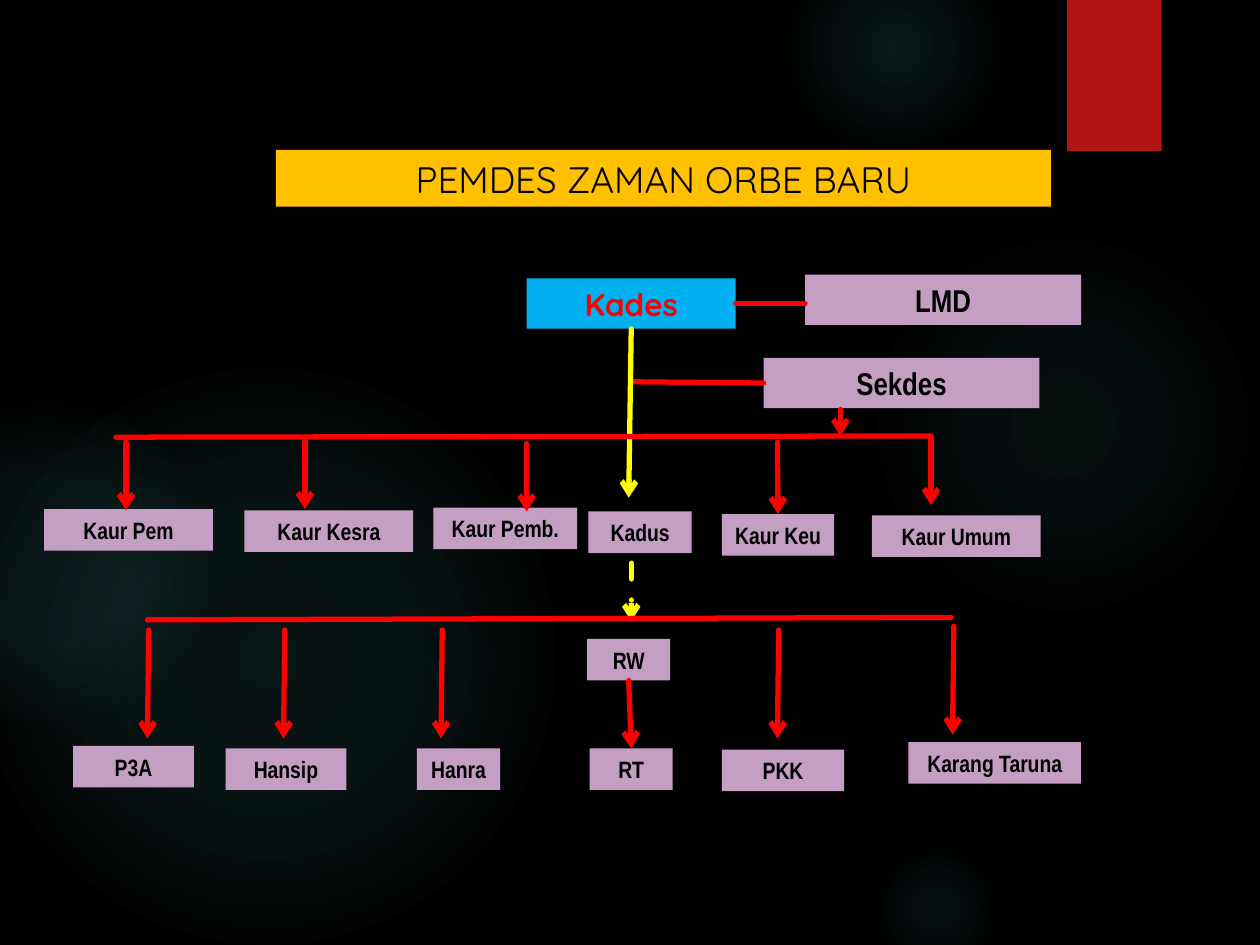
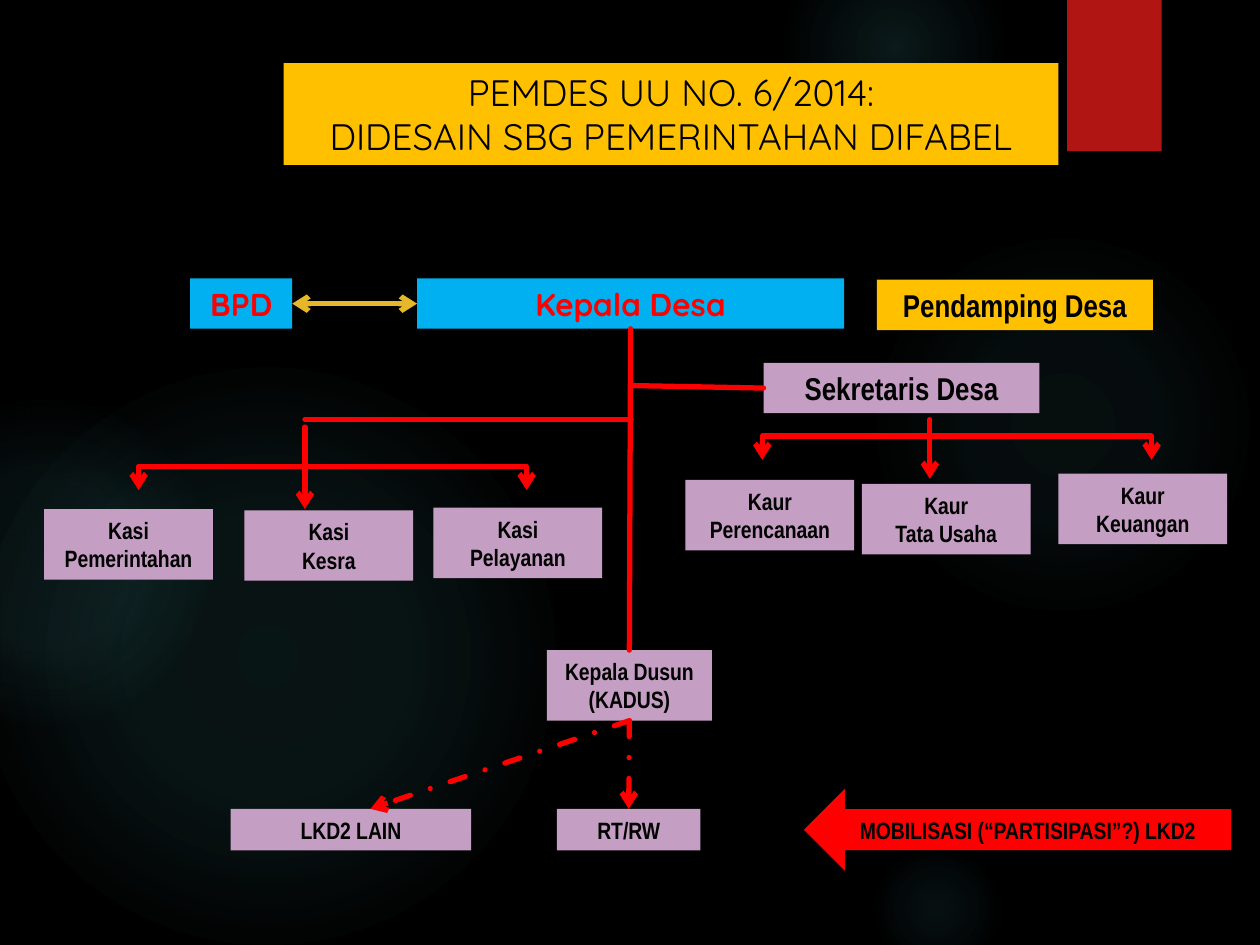
import pptx
import pptx.util
import pptx.dml.color
import pptx.enum.dml
import pptx.enum.shapes
import pptx.enum.text
import pptx.oxml
import pptx.oxml.ns

SHAPE = pptx.enum.shapes.MSO_SHAPE
CONNECTOR = pptx.enum.shapes.MSO_CONNECTOR
qn = pptx.oxml.ns.qn

COLS, ROWS = 10, 7.5
UNIT = pptx.util.Inches(1)  # one column wide, one row high
TOP, LEFT, BOTTOM, RIGHT = range(4)

COLORS = {
    "night": "000000", "glow": "50B9C1", "tab": "B01513", "gold": "FFC000",
    "sky": "00B0F0", "lilac": "C59EC3", "red": "FF0000", "yellow": "FFFF00",
    "amber": "E6B729", "black": "000000",
}
# fill, font, size, bold, text colour
STYLES = {
    "title": ("gold", "Quicksand", 21, False, "black"),
    "chief": ("sky", "Quicksand", 18, True, "red"),
    "officer": ("lilac", "Arial Narrow", 18, True, "black"),
    "advisor": ("gold", "Arial Narrow", 18, True, "black"),
    "unit": ("lilac", "Arial Narrow", 13.5, True, "black"),
    "push": ("red", "Arial Narrow", 13.5, True, "black"),
}
HEIGHTS = {"chief": 0.4, "officer": 0.4, "advisor": 0.4, "unit": 0.33}
TALL = 0.56  # unit box with two lines

# left, top, diameter, then (position %, opacity %) of the gradient stops
GLOWS = [
    (6.89, 1.83, 3.08, ((0, 7), (36, 6), (69, 0))),
    (6.22, -0.5, 1.75, ((0, 14), (36, 7), (73, 0))),
    (6.89, 6.67, 1.08, ((0, 9), (36, 5), (66, 0))),
    (-0.17, 2.92, 4.58, ((0, 11), (36, 10), (75, 0))),
    (-0.92, 3.17, 2.58, ((0, 8), (36, 8), (72, 0))),
]


def grid(*cells):
    return [round(cell * UNIT) for cell in cells]


def rgb(name):
    return pptx.dml.color.RGBColor.from_string(COLORS[name])


def paint(sp, color):
    sp.fill.solid()
    sp.fill.fore_color.rgb = rgb(color)
    sp.line.fill.background()


def write(sp, text, style):
    """Fill a shape in a named style and centre its text, one paragraph a line."""
    fill, font, size, bold, color = STYLES[style]
    paint(sp, fill)
    tf = sp.text_frame
    tf.word_wrap = True
    tf.auto_size = pptx.enum.text.MSO_AUTO_SIZE.NONE
    tf.vertical_anchor = pptx.enum.text.MSO_ANCHOR.MIDDLE
    tf.margin_left = tf.margin_right = pptx.util.Inches(0.07)
    tf.margin_top = tf.margin_bottom = pptx.util.Inches(0.04)
    for i, line in enumerate(text.split("\n")):
        p = tf.add_paragraph() if i else tf.paragraphs[0]
        p.alignment = pptx.enum.text.PP_ALIGN.CENTER
        r = p.add_run()
        r.text = line
        r.font.name = font
        r.font.size = pptx.util.Pt(size)
        r.font.bold = bold
        r.font.color.rgb = rgb(color)


def box(s, text, left, top, width, style="unit", height=None, kind=SHAPE.RECTANGLE):
    sp = s.shapes.add_shape(kind, *grid(left, top, width, height or HEIGHTS[style]))
    sp.shadow.inherit = False
    write(sp, text, style)
    return sp


def stroke(sp, color="red", head=False, tail=False, dashed=False):
    """Give a connector or open outline its round 3 pt line and arrowheads."""
    sp.line.color.rgb = rgb(color)
    sp.line.width = pptx.util.Pt(3)
    if dashed:
        sp.line.dash_style = pptx.enum.dml.MSO_LINE.DASH_DOT
    ln = sp.element.spPr.find(qn("a:ln"))
    ln.set("cap", "rnd")
    for tag, wanted in (("a:headEnd", head), ("a:tailEnd", tail)):
        if wanted:
            end = pptx.oxml.ns.qn(tag)
            ln.append(ln.makeelement(end, {"type": "arrow"}))


def link(s, start, end, **look):
    """Draw a straight connector; an end is (column, row) or (shape, side)."""
    joined = [not isinstance(e[0], (int, float)) for e in (start, end)]
    points = [(0, 0) if j else grid(*e) for e, j in zip((start, end), joined)]
    c = s.shapes.add_connector(CONNECTOR.STRAIGHT, *points[0], *points[1])
    if joined[0]:
        c.begin_connect(*start)
    if joined[1]:
        c.end_connect(*end)
    stroke(c, **look)
    spPr = c.element.spPr
    spPr.append(spPr.makeelement(qn("a:effectLst"), {}))


def bracket(s, left, right, top, bottom):
    """Draw a bar whose two ends turn down into arrows."""
    corners = [(left, bottom), (left, top), (right, top), (right, bottom)]
    points = [tuple(grid(*corner)) for corner in corners]
    fb = s.shapes.build_freeform(*points[0])
    fb.add_line_segments(points[1:], close=False)
    sp = fb.convert_to_shape()
    sp.shadow.inherit = False
    sp.fill.background()
    stroke(sp, head=True, tail=True)


def glow(s, left, top, size, stops):
    sp = s.shapes.add_shape(SHAPE.OVAL, *grid(left, top, size, size))
    sp.shadow.inherit = False
    sp.line.fill.background()
    sp.fill.background()
    gs = "".join(
        f'<a:gs pos="{pos * 1000}"><a:srgbClr val="{COLORS["glow"]}">'
        f'<a:alpha val="{alpha * 1000}"/></a:srgbClr></a:gs>'
        for pos, alpha in stops)
    grad = pptx.oxml.parse_xml(
        f'<a:gradFill {pptx.oxml.ns.nsdecls("a")}><a:gsLst>{gs}</a:gsLst>'
        '<a:path path="circle"><a:fillToRect l="50000" t="50000" r="50000" b="50000"/>'
        '</a:path></a:gradFill>')
    spPr = sp.element.spPr
    spPr.replace(spPr.find(qn("a:noFill")), grad)
    return sp


def decorate_master(prs, s):
    """Draw the backdrop on a slide, then move it to the master."""
    master = prs.slide_master
    master.background.fill.solid()
    master.background.fill.fore_color.rgb = rgb("night")
    backdrop = [glow(s, *g) for g in GLOWS]
    tab = s.shapes.add_shape(SHAPE.RECTANGLE, *grid(8.47, 0, 0.75, 1.2))
    tab.shadow.inherit = False
    paint(tab, "tab")
    for number, sp in enumerate(backdrop + [tab], start=20):
        sp.element.nvSpPr.cNvPr.id = number
        master.shapes.element.append(sp.element)


def titled_slide(prs, text, left, top, height):
    s = prs.slides.add_slide(prs.slide_layouts[5])
    title = s.shapes.title
    title.left, title.top, title.width, title.height = grid(left, top, 6.15, height)
    write(title, text, "title")
    return s


def old_order(s):
    kades = box(s, "Kades", 4.18, 2.21, 1.66, "chief")
    box(s, "LMD", 6.39, 2.18, 2.19, "officer")
    sekdes = box(s, "Sekdes", 6.06, 2.84, 2.19, "officer")
    units = {text: box(s, text, *place) for text, *place in [
        ("Kaur Pem", 0.35, 4.04, 1.34), ("Kaur Kesra", 1.94, 4.05, 1.34),
        ("Kaur Pemb.", 3.44, 4.03, 1.14), ("Kadus", 4.67, 4.06, 0.82),
        ("Kaur Keu", 5.73, 4.08, 0.89), ("Kaur Umum", 6.92, 4.09, 1.34),
        ("RW", 4.66, 5.07, 0.66), ("P3A", 0.58, 5.92, 0.96),
        ("Hansip", 1.79, 5.94, 0.96), ("Hanra", 3.31, 5.94, 0.66),
        ("RT", 4.68, 5.94, 0.66), ("PKK", 5.73, 5.95, 0.97),
        ("Karang Taruna", 7.21, 5.89, 1.37),
    ]}

    link(s, (kades, RIGHT), (6.39, 2.41))
    link(s, (5.01, 3.03), (sekdes, LEFT))
    link(s, (kades, BOTTOM), (4.99, 3.95), color="yellow", tail=True)
    link(s, (6.67, 3.25), (6.67, 3.46), tail=True)

    link(s, (0.92, 3.47), (7.39, 3.46))
    for x, top in [(1, 3.51), (2.42, 3.5), (4.18, 3.52), (7.39, 3.47)]:
        link(s, (x, top), (x, top + 0.54), tail=True)
    link(s, (6.17, 3.51), (units["Kaur Keu"], TOP), tail=True)

    link(s, (5.01, 4.47), (5.01, 4.93), color="yellow", tail=True, dashed=True)
    link(s, (1.17, 4.92), (7.55, 4.9))
    for x, top in [(1.18, 5), (2.26, 5), (3.51, 5), (6.18, 5), (7.57, 4.97)]:
        link(s, (x, top), (x - 0.01, top + 0.86), tail=True)
    link(s, (units["RW"], BOTTOM), (units["RT"], TOP), tail=True)


def new_order(s):
    bpd = box(s, "BPD", 1.51, 2.21, 0.81, "chief")
    kepala = box(s, "Kepala Desa", 3.31, 2.21, 3.39, "chief")
    box(s, "Pendamping Desa", 6.96, 2.22, 2.19, "advisor")
    sekretaris = box(s, "Sekretaris Desa", 6.06, 2.88, 2.19, "officer")
    for text, left, top in [
        ("Kasi Pemerintahan", 0.35, 4.04), ("Kasi\nKesra", 1.94, 4.05),
        ("Kasi\nPelayanan", 3.44, 4.03), ("Kaur Perencanaan", 5.44, 3.81),
        ("Kaur\nTata Usaha", 6.84, 3.84), ("Kaur\nKeuangan", 8.4, 3.76),
    ]:
        box(s, text, left, top, 1.34, height=TALL)
    kadus = box(s, "Kepala Dusun\n(KADUS)", 4.34, 5.16, 1.31, height=TALL)
    box(s, "LKD2 LAIN", 1.83, 6.42, 1.91)
    rt_rw = box(s, "RT/RW", 4.42, 6.42, 1.14)
    box(s, "MOBILISASI (“PARTISIPASI”?) LKD2", 6.38, 6.26, 3.39, "push",
        height=0.65, kind=SHAPE.LEFT_ARROW)

    link(s, (bpd, RIGHT), (kepala, LEFT), color="amber", head=True, tail=True)
    link(s, (kepala, BOTTOM), (kadus, TOP))
    link(s, (5.01, 3.06), (sekretaris, LEFT))
    link(s, (2.42, 3.33), (5.01, 3.33))
    bracket(s, 1.1, 4.18, 3.7, 3.89)
    link(s, (2.42, 3.39), (2.42, 4.04), tail=True)
    bracket(s, 6.05, 9.14, 3.46, 3.65)
    link(s, (7.38, 3.33), (7.38, 3.8), tail=True)
    link(s, (kadus, BOTTOM), (rt_rw, TOP), tail=True, dashed=True)
    link(s, (kadus, BOTTOM), (2.94, 6.42), tail=True, dashed=True)


def main():
    prs = pptx.Presentation()
    prs.slide_width, prs.slide_height = grid(COLS, ROWS)
    s = titled_slide(prs, "PEMDES ZAMAN ORBE BARU", 2.19, 1.19, 0.45)
    decorate_master(prs, s)
    old_order(s)
    s = titled_slide(
        prs, "PEMDES UU NO. 6/2014:\nDIDESAIN SBG PEMERINTAHAN DIFABEL", 2.25, 0.5, 0.81)
    new_order(s)
    prs.save("out.pptx")


if __name__ == "__main__":
    main()
